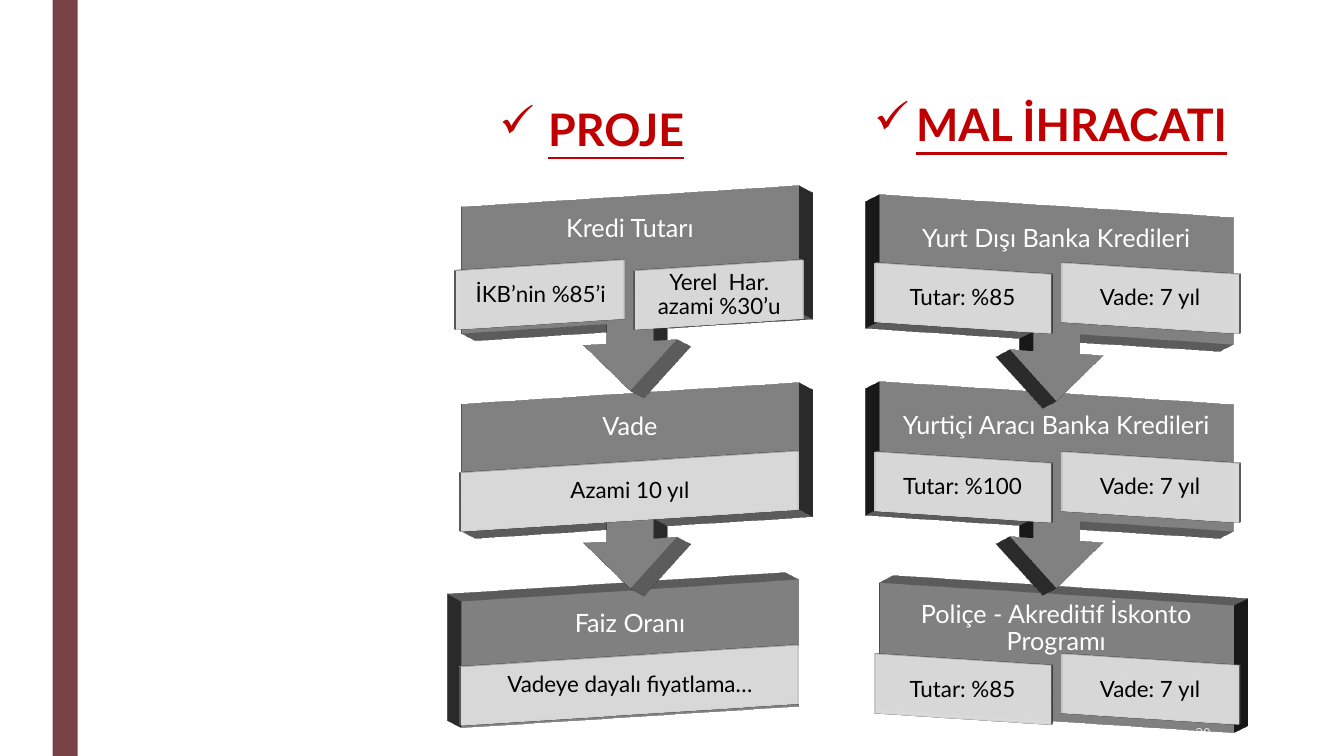
from typing import NamedTuple

from lxml.etree import SubElement
from pptx import Presentation
from pptx.dml.color import RGBColor
from pptx.enum.shapes import MSO_SHAPE
from pptx.enum.text import MSO_ANCHOR, PP_ALIGN
from pptx.oxml.ns import qn
from pptx.util import Pt

RED = RGBColor(0xC0, 0x00, 0x00)
WINE = RGBColor(0x7A, 0x42, 0x47)
GRAY = RGBColor(0x7F, 0x7F, 0x7F)
PALE = RGBColor(0xD8, 0xD8, 0xD8)
WHITE = RGBColor(0xFF, 0xFF, 0xFF)
SNOW = RGBColor(0xFE, 0xFF, 0xFF)
BLACK = RGBColor(0x00, 0x00, 0x00)

DEGREE = 60000
TILT = 10.5
BAR_DEPTH = 30
PANEL_DEPTH = 4
BAR_TALL = 92
ARROW_TALL = 141.5
TITLE_TALL = 50
PANEL_TALL = 42.5


class Box(NamedTuple):
    left: float
    top: float
    width: float
    height: float


class Style(NamedTuple):
    size: float
    color: RGBColor
    align: PP_ALIGN = PP_ALIGN.CENTER
    font: str = "Lato"
    bold: bool = False
    line: bool = False


class Row(NamedTuple):
    top: float
    drop: float
    title: str
    notes: tuple[str, ...]


class Column(NamedTuple):
    left: float
    width: float
    turn: float
    rows: tuple[Row, ...]


class Heading(NamedTuple):
    box: Box
    lead: str
    text: str
    space: float
    indent: float


TITLE = Style(18, WHITE)
NOTE = Style(16, BLACK)
HEAD = Style(32, RED, bold=True, line=True)
SPACE = Style(32, RED, bold=True)
NUMBER = Style(10, SNOW, PP_ALIGN.RIGHT, "Quicksand")

COLUMNS = (
    Column(322.5, 255, 340.5, (
        Row(139, 50.5, "Kredi Tutarı", ("İKB’nin %85’i", "Yerel  Har. azami %30’u")),
        Row(280, 50, "Vade", ("Azami 10 yıl",)),
        Row(421, 47.5, "Faiz Oranı", ("Vadeye dayalı fiyatlama…",)),
    )),
    Column(620.5, 268, 19.5, (
        Row(146, 46, "Yurt Dışı Banka Kredileri", ("Tutar: %85", "Vade: 7 yıl")),
        Row(279.5, 47.5, "Yurtiçi Aracı Banka Kredileri", ("Tutar: %100", "Vade: 7 yıl")),
        Row(424, 47.5, "Poliçe - Akreditif İskonto Programı", ("Tutar: %85", "Vade: 7 yıl")),
    )),
)
HEADINGS = (
    Heading(Box(610.5, 69, 280, 53), "", "MAL İHRACATI", 0.94, 30),
    Heading(Box(310.5, 69, 224.5, 46), " ", "PROJE", 1.0, 27),
)


def add_run(para, text: str, style: Style) -> None:
    run = para.add_run()
    run.text = text
    run.font.color.rgb = style.color
    form = {"name": style.font, "size": Pt(style.size),
            "bold": style.bold, "underline": style.line}
    for key, value in form.items():
        setattr(run.font, key, value)


def add_text(slide, box: Box, text: str, style: Style, pad: tuple[float, float],
             space: float = 0.9, anchor: MSO_ANCHOR = MSO_ANCHOR.MIDDLE):
    frame = slide.shapes.add_textbox(*map(Pt, box)).text_frame
    wide, high = map(Pt, pad)
    form = {"word_wrap": True, "vertical_anchor": anchor,
            "margin_left": wide, "margin_right": wide,
            "margin_top": high, "margin_bottom": high}
    for key, value in form.items():
        setattr(frame, key, value)
    para = frame.paragraphs[0]
    para.alignment = style.align
    para.line_spacing = space
    if text:
        add_run(para, text, style)
    return para


def add_block(slide, kind: MSO_SHAPE, box: Box, fill: RGBColor):
    shape = slide.shapes.add_shape(kind, *map(Pt, box))
    shape.shadow.inherit = False
    shape.fill.solid()
    shape.fill.fore_color.rgb = fill
    shape.line.fill.background()
    return shape


def add_depth(shape, turn: float, depth: float) -> None:
    props = shape._element.spPr
    scene = SubElement(props, qn("a:scene3d"))
    camera = SubElement(scene, qn("a:camera"), prst="orthographicFront")
    SubElement(camera, qn("a:rot"), lat=str(int(TILT * DEGREE)),
               lon=str(int(turn * DEGREE)), rev="0")
    SubElement(scene, qn("a:lightRig"), rig="threePt", dir="t")
    SubElement(props, qn("a:sp3d"), extrusionH=str(Pt(depth)), prstMaterial="matte")


def add_row(slide, col: Column, row: Row, last: bool) -> None:
    kind = MSO_SHAPE.RECTANGLE if last else MSO_SHAPE.UP_ARROW_CALLOUT
    tall = BAR_TALL if last else ARROW_TALL
    bar = add_block(slide, kind, Box(col.left, row.top, col.width, tall), GRAY)
    bar.rotation = 0 if last else 180
    add_depth(bar, col.turn, BAR_DEPTH)
    add_text(slide, Box(col.left, row.top, col.width, TITLE_TALL), row.title, TITLE, (10, 10))
    width = col.width / len(row.notes)
    for index, note in enumerate(row.notes):
        box = Box(col.left + index * width, row.top + row.drop, width, PANEL_TALL)
        panel = add_block(slide, MSO_SHAPE.RECTANGLE, box, PALE)
        color = panel._element.spPr.find(qn("a:solidFill"))[0]
        SubElement(color, qn("a:alpha"), val="90000")
        add_depth(panel, col.turn, PANEL_DEPTH)
        add_text(slide, box, note, NOTE, (8.5, 1.5))


def add_heading(slide, item: Heading) -> None:
    para = add_text(slide, item.box, item.lead, SPACE, (7.2, 3.6), item.space, MSO_ANCHOR.TOP)
    add_run(para, item.text, HEAD)
    props = para._p.get_or_add_pPr()
    props.set("marL", str(Pt(item.indent)))
    props.set("indent", str(Pt(-item.indent)))
    color = SubElement(props, qn("a:buClr"))
    SubElement(color, qn("a:srgbClr"), val=str(RED))
    SubElement(props, qn("a:buFont"), typeface="OpenSymbol")
    SubElement(props, qn("a:buChar"), char="✓")


def main() -> None:
    deck = Presentation()
    deck.slide_width, deck.slide_height = Pt(960), Pt(540)
    slide = deck.slides.add_slide(deck.slide_layouts[6])
    add_block(slide, MSO_SHAPE.RECTANGLE, Box(37.5, 0, 18, 540), WINE)
    for item in HEADINGS:
        add_heading(slide, item)
    for col in COLUMNS:
        for row in reversed(col.rows):
            add_row(slide, col, row, row is col.rows[-1])
    add_text(slide, Box(746, 508, 126, 32), "28", NUMBER, (7.2, 3.6))
    deck.save("out.pptx")


if __name__ == "__main__":
    main()
